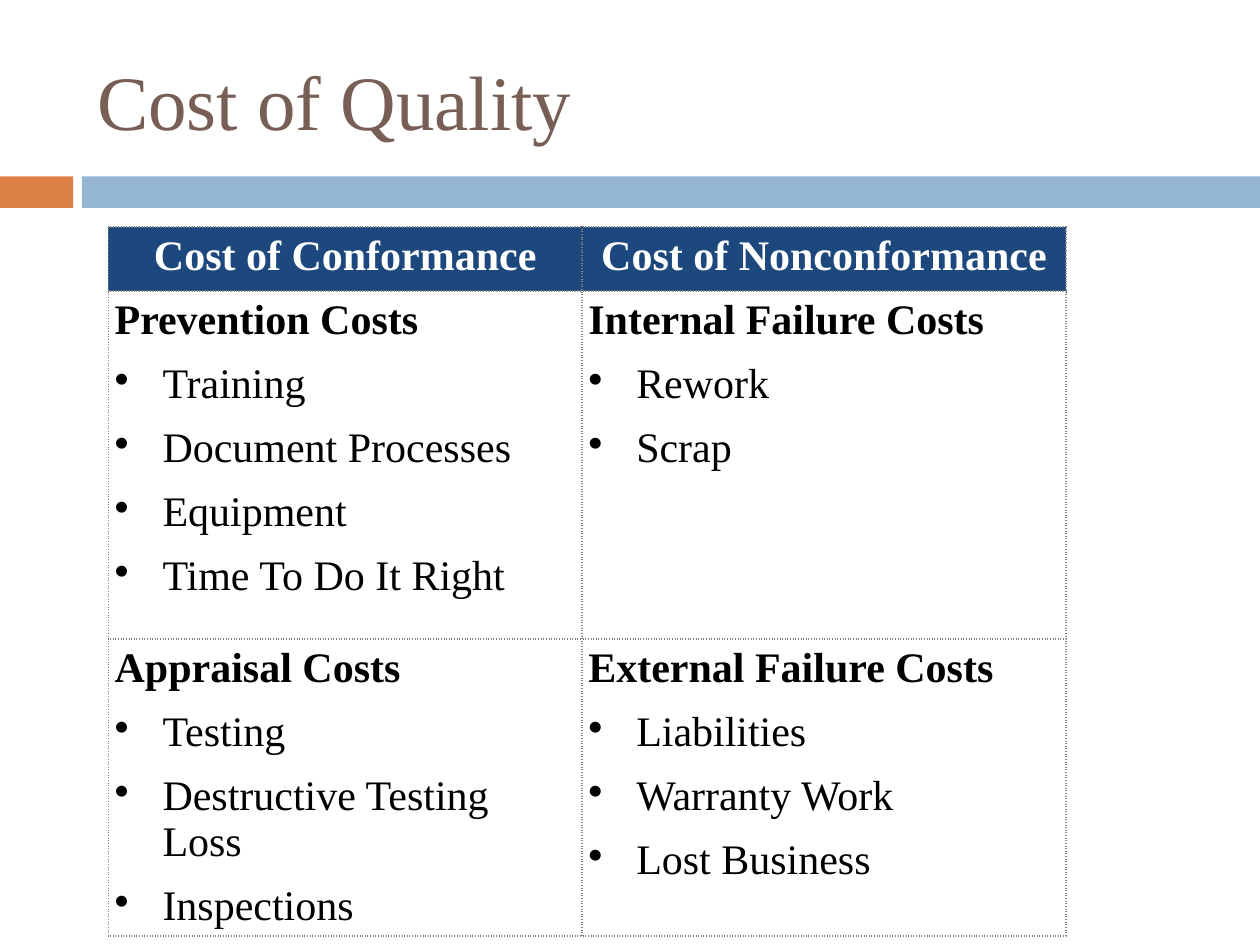
"""Build the Cost of Quality slide."""
from lxml import etree
from pptx import Presentation
from pptx import util as u
from pptx.dml.color import RGBColor
from pptx.enum import shapes, text
from pptx.oxml import ns

WIDTH, HEIGHT = u.Inches(10), u.Inches(7.5)
FONT = "Times New Roman"
ORANGE = RGBColor(0xDD, 0x80, 0x47)
LIGHT_BLUE = RGBColor(0x94, 0xB6, 0xD2)
BROWN = RGBColor(0x77, 0x5F, 0x55)
NAVY = RGBColor(0x1D, 0x48, 0x7E)
GRAY = RGBColor(0x80, 0x80, 0x80)
WHITE = RGBColor(0xFF, 0xFF, 0xFF)
BLACK = RGBColor(0, 0, 0)

COLUMN_WIDTHS = [3.76, 3.84]
ROW_HEIGHTS = [0.51, 2.76, 2.2]
HEADERS = ["Cost of Conformance", "Cost of Nonconformance"]
COSTS = [
    [
        ("Prevention Costs", ["Training", "Document Processes", "Equipment", "Time To Do It Right"]),
        ("Internal Failure Costs", ["Rework", "Scrap"]),
    ],
    [
        ("Appraisal Costs", ["Testing", "Destructive Testing Loss", "Inspections"]),
        ("External Failure Costs", ["Liabilities", "Warranty Work", "Lost Business"]),
    ],
]


def inches(*lengths):
    """Convert lengths in inches to slide units."""
    return [u.Inches(length) for length in lengths]


def add_element(parent, tag, **attributes):
    """Append a drawing element with the given attributes."""
    return etree.SubElement(parent, ns.qn(tag), attributes)


def add_run(paragraph, words, size, color, bold=False):
    """Add one formatted run to a paragraph."""
    run = paragraph.add_run()
    run.text = words
    run.font.name = FONT
    run.font.size = u.Pt(size)
    run.font.bold = bold
    run.font.color.rgb = color


def add_title(slide, box, words):
    """Place and format the title placeholder."""
    title = slide.shapes.title
    title.left, title.top, title.width, title.height = box
    frame = title.text_frame
    frame.word_wrap = True
    frame.vertical_anchor = text.MSO_ANCHOR.MIDDLE
    paragraph = frame.paragraphs[0]
    paragraph.alignment = text.PP_ALIGN.LEFT
    add_run(paragraph, words, 44, BROWN)


def add_band(slide, box):
    """Draw the accent block and the long bar beside it."""
    left, top, width, height = box
    for start, end, color in [(0, 0.058, ORANGE), (0.065, 1, LIGHT_BLUE)]:
        bar = slide.shapes.add_shape(
            shapes.MSO_SHAPE.RECTANGLE, left + int(width * start), top,
            int(width * (end - start)), height)
        bar.shadow.inherit = False
        bar.fill.solid()
        bar.fill.fore_color.rgb = color
        bar.line.fill.background()


def format_cell(cell, color):
    """Set a cell's margins, dotted borders and fill."""
    cell.margin_left = cell.margin_right = u.Inches(0.05)
    cell.margin_top = cell.margin_bottom = u.Inches(0.05)
    properties = cell._tc.get_or_add_tcPr()
    for side in ("a:lnL", "a:lnR", "a:lnT", "a:lnB"):
        line = add_element(properties, side, w=str(u.Pt(1)))
        add_element(add_element(line, "a:solidFill"), "a:srgbClr", val=str(GRAY))
        add_element(line, "a:prstDash", val="dot")
    cell.fill.solid()
    cell.fill.fore_color.rgb = color


def add_bullet(paragraph):
    """Give a paragraph a bullet with a hanging indent."""
    properties = paragraph._p.get_or_add_pPr()
    properties.set("marL", str(u.Inches(0.38)))
    properties.set("indent", str(-u.Inches(0.38)))
    add_element(properties, "a:buChar", char="•")
    tabs = add_element(properties, "a:tabLst")
    add_element(tabs, "a:tab", pos=str(u.Inches(0.5)), algn="l")


def fill_cell(cell, heading, items=(), header=False):
    """Write a bold heading and its bulleted items into a cell."""
    format_cell(cell, NAVY if header else WHITE)
    frame = cell.text_frame
    for index, words in enumerate([heading, *items]):
        paragraph = frame.add_paragraph() if index else frame.paragraphs[0]
        paragraph.alignment = text.PP_ALIGN.CENTER if header else text.PP_ALIGN.LEFT
        paragraph.space_after = u.Pt(10)
        if index:
            add_bullet(paragraph)
        add_run(paragraph, words, 24, WHITE if header else BLACK, bold=index == 0)


def add_cost_table(slide, box):
    """Build the table of quality costs."""
    table = slide.shapes.add_table(len(ROW_HEIGHTS), len(COLUMN_WIDTHS), *box).table
    for column, width in zip(table.columns, inches(*COLUMN_WIDTHS)):
        column.width = width
    for row, height in zip(table.rows, inches(*ROW_HEIGHTS)):
        row.height = height
    for column, heading in enumerate(HEADERS):
        fill_cell(table.cell(0, column), heading, header=True)
    for row, groups in enumerate(COSTS, start=1):
        for column, (heading, items) in enumerate(groups):
            fill_cell(table.cell(row, column), heading, items)


def main():
    """Assemble and save the presentation."""
    presentation = Presentation()
    presentation.slide_width, presentation.slide_height = WIDTH, HEIGHT
    slide = presentation.slides.add_slide(presentation.slide_layouts[5])
    add_band(slide, [0, u.Inches(1.4), WIDTH, u.Inches(0.25)])
    add_title(slide, inches(0.67, 0.25, 8.92, 1.08), "Cost of Quality")
    add_cost_table(slide, inches(0.86, 1.8, sum(COLUMN_WIDTHS), sum(ROW_HEIGHTS)))
    presentation.save("out.pptx")


if __name__ == "__main__":
    main()
